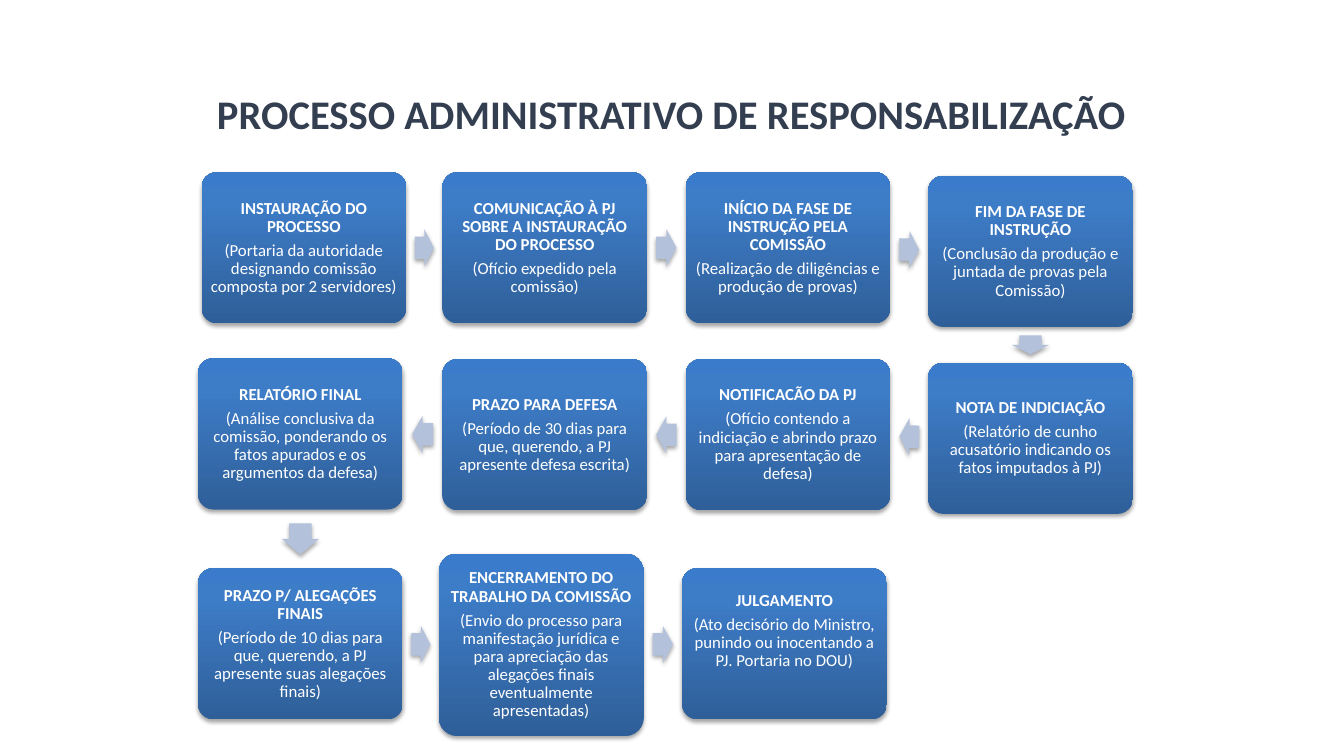
from itertools import pairwise
from math import atan2, degrees

from lxml.etree import SubElement
from pptx import Presentation
from pptx.dml.color import RGBColor
from pptx.enum.shapes import MSO_SHAPE
from pptx.enum.text import MSO_ANCHOR, PP_ALIGN
from pptx.oxml.ns import qn
from pptx.util import Cm, Pt

BOX_WIDTH = 5.16
BOX_HEIGHT = 3.81
ARROW_WIDTH = 0.94
ARROW_GAP_SHARE = 0.53
GRADIENT = [(0, "2F5F99"), (0.8, "3D7CC7"), (1, "3A7CCB")]

STEPS = [
    (5.08, 4.34, BOX_HEIGHT, "INSTAURAÇÃO DO PROCESSO",
     "(Portaria da autoridade designando comissão composta por 2 servidores)"),
    (11.15, 4.34, BOX_HEIGHT, "COMUNICAÇÃO À PJ SOBRE A INSTAURAÇÃO DO PROCESSO",
     "(Ofício expedido pela comissão)"),
    (17.28, 4.34, BOX_HEIGHT, "INÍCIO DA FASE DE INSTRUÇÃO PELA COMISSÃO",
     "(Realização de diligências e produção de provas)"),
    (23.39, 4.43, BOX_HEIGHT, "FIM DA FASE DE INSTRUÇÃO",
     "(Conclusão da produção e juntada de provas pela Comissão)"),
    (23.39, 9.14, BOX_HEIGHT, "NOTA DE INDICIAÇÃO",
     "(Relatório de cunho acusatório indicando os fatos imputados à PJ)"),
    (17.28, 9.05, BOX_HEIGHT, "NOTIFICACÃO DA PJ",
     "(Ofício contendo a indiciação e abrindo prazo para apresentação de defesa)"),
    (11.15, 9.05, BOX_HEIGHT, "PRAZO PARA DEFESA",
     "(Período de 30 dias para que, querendo, a PJ apresente defesa escrita)"),
    (4.99, 9.03, BOX_HEIGHT, "RELATÓRIO FINAL",
     "(Análise conclusiva da comissão, ponderando os fatos apurados e os argumentos da defesa)"),
    (4.99, 14.32, BOX_HEIGHT, "PRAZO P/ ALEGAÇÕES FINAIS",
     "(Período de 10 dias para que, querendo, a PJ apresente suas alegações finais)"),
    (11.06, 13.95, 4.6, "ENCERRAMENTO DO TRABALHO DA COMISSÃO",
     "(Envio do processo para manifestação jurídica e para apreciação das alegações finais "
     "eventualmente apresentadas)"),
    (17.19, 14.32, BOX_HEIGHT, "JULGAMENTO",
     "(Ato decisório do Ministro, punindo ou inocentando a PJ. Portaria no DOU)"),
]


def color(value):
    return RGBColor.from_string(value)


def style_paragraph(paragraph, size, value, bold):
    paragraph.alignment = PP_ALIGN.CENTER
    paragraph.font.name = "Calibri"
    paragraph.font.size = Pt(size)
    paragraph.font.bold = bold
    paragraph.font.color.rgb = color(value)


def add_shadow(shape):
    shape.shadow.inherit = False
    effects = shape._element.spPr.find(qn("a:effectLst"))
    shadow = SubElement(effects, qn("a:outerShdw"), blurRad=str(Pt(3.1)),
                        dist=str(Pt(1.8)), dir="5400000", rotWithShape="0")
    black = SubElement(shadow, qn("a:srgbClr"), val="000000")
    SubElement(black, qn("a:alpha"), val="35000")


def fill_gradient(shape):
    shape.fill.gradient()
    shape.fill.gradient_angle = 90
    stops = shape._element.spPr.find(qn("a:gradFill")).find(qn("a:gsLst"))
    for stop in list(stops):
        stops.remove(stop)
    for position, value in GRADIENT:
        stop = SubElement(stops, qn("a:gs"), pos=str(round(position * 100000)))
        SubElement(stop, qn("a:srgbClr"), val=value)


def add_title(slide, text):
    box = slide.shapes.add_textbox(Cm(5.13), Cm(2.06), Cm(23.6), Cm(1.6))
    frame = box.text_frame
    frame.word_wrap = True
    frame.vertical_anchor = MSO_ANCHOR.MIDDLE
    frame.text = text
    style_paragraph(frame.paragraphs[0], 29, "333F50", True)


def add_step(slide, left, top, height, heading, detail):
    shape = slide.shapes.add_shape(MSO_SHAPE.ROUNDED_RECTANGLE, Cm(left), Cm(top),
                                   Cm(BOX_WIDTH), Cm(height))
    shape.adjustments[0] = 0.1
    fill_gradient(shape)
    shape.line.fill.background()
    add_shadow(shape)
    frame = shape.text_frame
    frame.word_wrap = True
    frame.vertical_anchor = MSO_ANCHOR.MIDDLE
    frame.margin_left = frame.margin_right = Cm(0.12)
    frame.margin_top = frame.margin_bottom = Cm(0.12)
    frame.text = f"{heading}\n{detail}"
    for paragraph, bold in zip(frame.paragraphs, (True, False)):
        paragraph.line_spacing = 0.9
        paragraph.space_after = Pt(4.2)
        style_paragraph(paragraph, 12, "FFFFFF", bold)
    return shape


def add_arrow(slide, start, end):
    start_left, start_top, start_height = start[:3]
    end_left, end_top, end_height = end[:3]
    across = end_left - start_left
    down = end_top + end_height / 2 - start_top - start_height / 2
    if abs(across) > abs(down):
        gap = abs(across) - BOX_WIDTH
        center_x = (start_left + end_left + BOX_WIDTH) / 2
        center_y = start_top + start_height / 2 + down / 2
    else:
        gap = end_top - start_top - start_height
        center_x = start_left + BOX_WIDTH / 2
        center_y = end_top - gap / 2
    length = gap * ARROW_GAP_SHARE
    arrow = slide.shapes.add_shape(MSO_SHAPE.RIGHT_ARROW, Cm(center_x - length / 2),
                                   Cm(center_y - ARROW_WIDTH / 2), Cm(length), Cm(ARROW_WIDTH))
    arrow.adjustments[0] = 0.6
    arrow.adjustments[1] = 0.5
    arrow.rotation = degrees(atan2(down, across))
    arrow.fill.solid()
    arrow.fill.fore_color.rgb = color("B3C1DB")
    arrow.line.fill.background()
    add_shadow(arrow)


def main():
    presentation = Presentation()
    presentation.slide_width = Cm(33.87)
    presentation.slide_height = Cm(19.05)
    slide = presentation.slides.add_slide(presentation.slide_layouts[6])
    add_title(slide, "PROCESSO ADMINISTRATIVO DE RESPONSABILIZAÇÃO")
    boxes = [add_step(slide, *step) for step in STEPS]
    boxes[-1].text_frame.margin_bottom = Cm(0.76)
    for start, end in pairwise(STEPS):
        add_arrow(slide, start, end)
    presentation.save("out.pptx")


if __name__ == "__main__":
    main()
